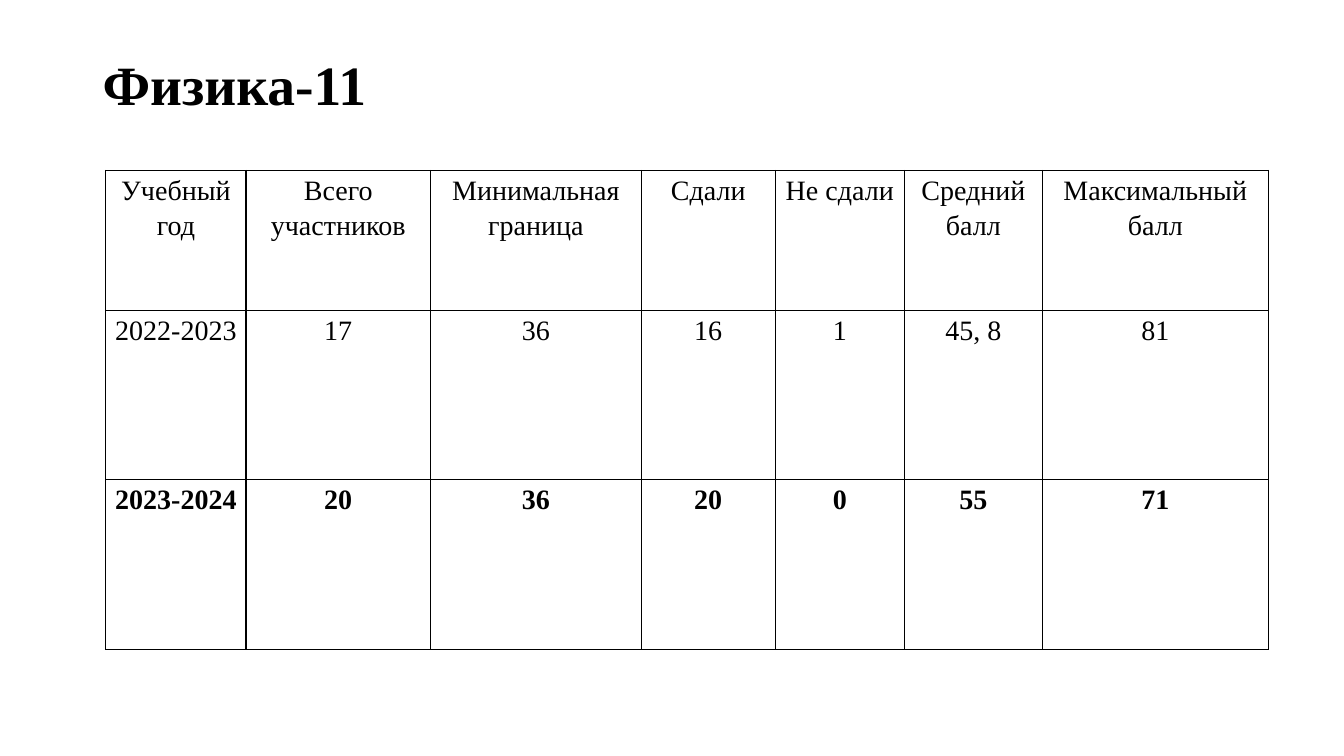
from pptx import Presentation
from pptx.dml.color import RGBColor
from pptx.enum.text import MSO_ANCHOR, PP_ALIGN
from pptx.oxml import parse_xml
from pptx.oxml.ns import nsdecls
from pptx.util import Inches, Pt

BLACK = RGBColor(0x00, 0x00, 0x00)
FONT = "Times New Roman"
LINE_SPACING = 1.15


def add_text(para, text, size, bold):
    para.line_spacing = LINE_SPACING
    span = para.add_run()
    span.text = text
    span.font.name = FONT
    span.font.size = Pt(size)
    span.font.bold = bold
    span.font.color.rgb = BLACK


def add_borders(cell):
    props = cell._tc.get_or_add_tcPr()
    for position, side in enumerate(("lnL", "lnR", "lnT", "lnB")):
        props.insert(position, parse_xml(
            f'<a:{side} {nsdecls("a")} w="{Pt(1)}"><a:solidFill>'
            f'<a:srgbClr val="{BLACK}"/></a:solidFill></a:{side}>'))


deck = Presentation()
deck.slide_width, deck.slide_height = Inches(13.33), Inches(7.5)
page = deck.slides.add_slide(deck.slide_layouts[6])

# Title
box = page.shapes.add_textbox(Inches(0.92), Inches(0.4), Inches(11.5), Inches(1.45))
frame = box.text_frame
frame.word_wrap = True
frame.vertical_anchor = MSO_ANCHOR.TOP
frame.margin_top = frame.margin_bottom = 0
add_text(frame.paragraphs[0], "Физика-11", 39.6, True)

# Exam results
results = [
    ["Учебный год", "Всего участников", "Минимальная граница", "Сдали",
     "Не сдали", "Средний балл", "Максимальный балл"],
    ["2022-2023", "17", "36", "16", "1", "45, 8", "81"],
    ["2023-2024", "20", "36", "20", "0", "55", "71"],
]
column_widths = [1.39, 1.83, 2.09, 1.33, 1.28, 1.37, 2.24]
row_heights = [1.39, 1.68, 1.68]

table = page.shapes.add_table(
    len(results), len(column_widths), Inches(1.05), Inches(1.69),
    Inches(sum(column_widths)), Inches(sum(row_heights))).table
table.first_row = table.horz_banding = False
for column, width in zip(table.columns, column_widths):
    column.width = Inches(width)
for row, height in zip(table.rows, row_heights):
    row.height = Inches(height)

for row_index, values in enumerate(results):
    latest_year = row_index == len(results) - 1
    for column_index, value in enumerate(values):
        cell = table.cell(row_index, column_index)
        cell.fill.background()
        cell.margin_left = cell.margin_right = Inches(0.07)
        cell.margin_top = cell.margin_bottom = 0
        add_borders(cell)
        para = cell.text_frame.paragraphs[0]
        para.alignment = PP_ALIGN.CENTER
        add_text(para, value, 20, latest_year)

deck.save("out.pptx")
